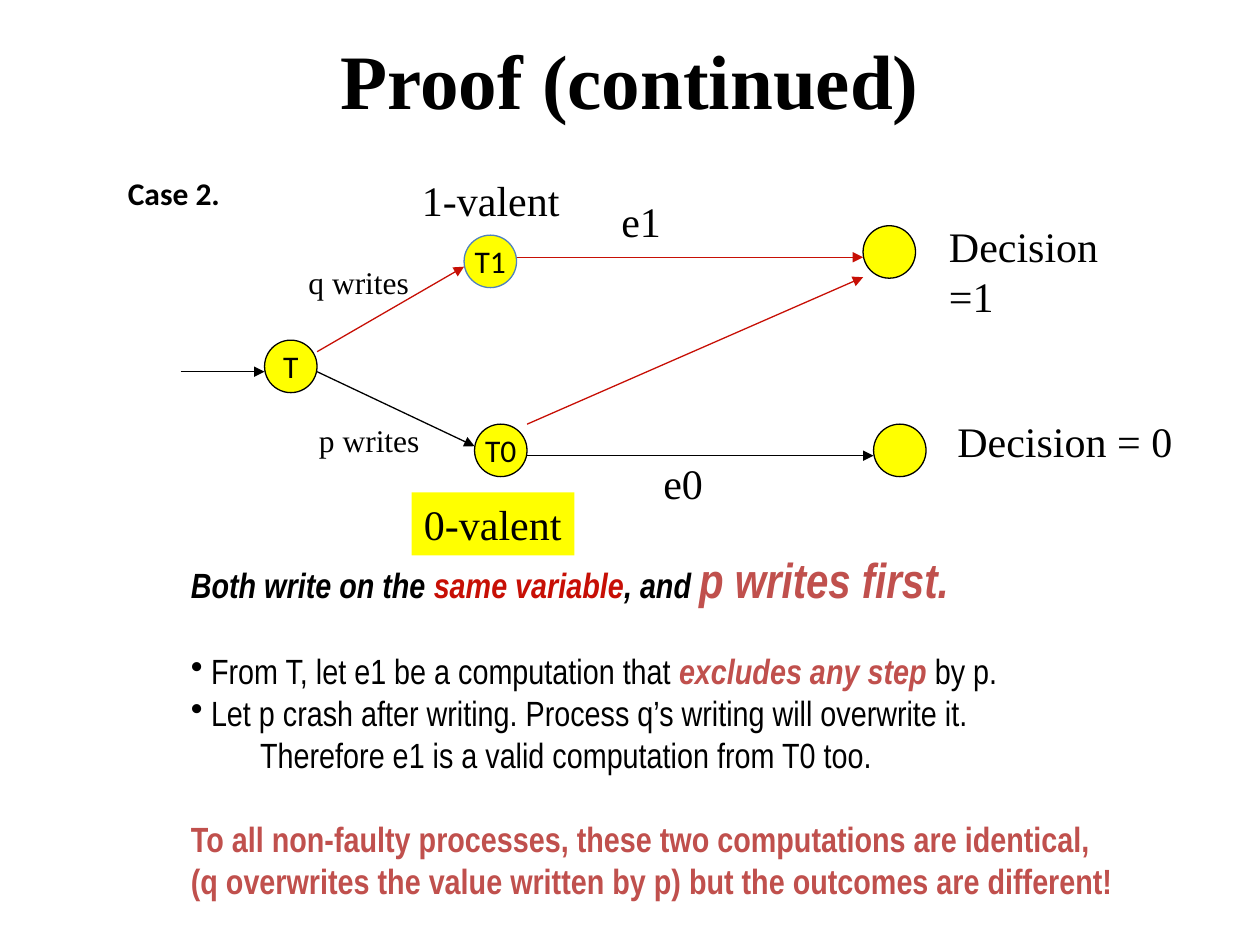
from dataclasses import dataclass

from lxml.etree import SubElement
from pptx import Presentation
from pptx.dml.color import RGBColor
from pptx.enum.shapes import MSO_CONNECTOR, MSO_SHAPE
from pptx.enum.text import MSO_ANCHOR, MSO_AUTO_SIZE, PP_ALIGN
from pptx.oxml.ns import qn
from pptx.util import Inches, Pt


@dataclass(frozen=True)
class Theme:
    black: str = "000000"
    red: str = "C70F05"
    rose: str = "C0504D"
    blue: str = "4F81BD"
    yellow: str = "FFFF00"
    serif: str = "Times New Roman"
    sans: str = "Calibri"
    narrow: str = "Arial Narrow"
    title: int = 44
    loud: int = 28
    big: int = 24
    body: int = 20
    small: int = 18
    rule: float = 0.75


class Deck:
    """Places elements on a grid of 120 columns by 90 rows."""

    def __init__(self, theme):
        self.theme = theme
        self.prs = Presentation()
        self.prs.slide_width, self.prs.slide_height = Inches(10), Inches(7.5)
        self.slide = self.prs.slides.add_slide(self.prs.slide_layouts[6])
        self.shapes = self.slide.shapes

    def grid(self, *cells):
        wide, high = self.prs.slide_width / 120, self.prs.slide_height / 90
        return [round(n * (high if i % 2 else wide)) for i, n in enumerate(cells)]

    def put(self, item, values):
        for name, value in values.items():
            setattr(item, name, value)

    def run(self, para, text, color, **font):
        run = para.add_run()
        run.text = text
        self.put(run.font, font)
        run.font.color.rgb = RGBColor.from_string(color)

    def box(self, spot, **frame):
        box = self.shapes.add_textbox(*self.grid(*spot))
        self.put(box.text_frame, {"word_wrap": False, **frame})
        return box

    def label(self, text, spot, size, face=None, bold=False, fill=None):
        box = self.box(spot, auto_size=MSO_AUTO_SIZE.SHAPE_TO_FIT_TEXT)
        self.run(box.text_frame.paragraphs[0], text, self.theme.black,
                 name=face or self.theme.serif, size=Pt(size), bold=bold)
        if fill:
            box.fill.solid()
            box.fill.fore_color.rgb = RGBColor.from_string(fill)

    def title(self, text, spot):
        box = self.box(spot, word_wrap=True, vertical_anchor=MSO_ANCHOR.MIDDLE)
        para = box.text_frame.paragraphs[0]
        para.alignment = PP_ALIGN.CENTER
        self.run(para, text, self.theme.black, name=self.theme.serif,
                 size=Pt(self.theme.title), bold=True)

    def node(self, text, left, top, edge):
        node = self.shapes.add_shape(MSO_SHAPE.OVAL, *self.grid(left, top, 5, 5))
        node.shadow.inherit = False
        node.fill.solid()
        node.fill.fore_color.rgb = RGBColor.from_string(self.theme.yellow)
        node.line.color.rgb = RGBColor.from_string(edge)
        node.line.width = Pt(self.theme.rule)
        if text:
            self.put(node.text_frame, {"word_wrap": False,
                                       "vertical_anchor": MSO_ANCHOR.MIDDLE})
            para = node.text_frame.paragraphs[0]
            para.alignment = PP_ALIGN.CENTER
            self.run(para, text, self.theme.black, name=self.theme.sans,
                     size=Pt(self.theme.small))

    def arrow(self, ends, color):
        line = self.shapes.add_connector(MSO_CONNECTOR.STRAIGHT, *self.grid(*ends))
        line.line.color.rgb = RGBColor.from_string(color)
        line.line.width = Pt(self.theme.rule)
        props = line.element.spPr
        SubElement(props.find(qn("a:ln")), qn("a:tailEnd"), type="triangle")
        SubElement(props, qn("a:effectLst"))

    def notes(self, spot, rows):
        frame = self.box(spot).text_frame
        for i, (gap, left, dot, parts) in enumerate(rows):
            para = frame.add_paragraph() if i else frame.paragraphs[0]
            para.space_before = Pt(gap)
            props = para._p.get_or_add_pPr()
            props.set("marL", str(Inches(left)))
            props.set("indent", str(-Inches(left) if dot else 0))
            if dot:
                SubElement(props, qn("a:buChar"), char="•")
            for text, color, strong, slant, size in parts:
                self.run(para, text, color, name=self.theme.narrow,
                         size=Pt(size), bold=strong, italic=slant)


def main():
    look = Theme()
    deck = Deck(look)
    black, red, rose = look.black, look.red, look.rose

    deck.title("Proof (continued)", (9, 0, 102, 15))

    # States
    for text, left, top, edge in (
        ("T", 25.2, 32.4, black),
        ("T0", 45.2, 40.4, black),
        ("T1", 44.2, 22.4, look.blue),
        ("", 83.2, 40.4, black),
        ("", 82.2, 21.5, black),
    ):
        deck.node(text, left, top, edge)

    # Steps between states
    for ends, color in (
        ((17.2, 35.4, 25.2, 35.4), black),
        ((30.2, 33.5, 44.2, 25.4), red),
        ((30.2, 35.4, 45.2, 42.5), black),
        ((49.2, 24.5, 82.2, 24.5), red),
        ((50.2, 43.4, 83.2, 43.4), black),
        ((50.2, 40.4, 82.2, 26.4), red),
    ):
        deck.arrow(ends, color)

    # Labels
    for text, left, top, wide in (
        ("Decision =1", 89.2, 20.4, 21.8),
        ("Decision = 0", 90, 39, 22.9),
        ("e1", 58, 18, 6.2),
        ("e0", 62, 43, 6.2),
        ("1-valent", 39, 16, 15.5),
    ):
        deck.label(text, (left, top, wide, 6), look.big)
    deck.label("0-valent", (39.2, 46.9, 15.5, 6), look.big, fill=look.yellow)
    deck.label("p writes", (29.2, 39.5, 12, 4.8), look.small)
    deck.label("q writes", (28.2, 24.5, 12, 4.8), look.small)
    deck.label("Case 2.", (11, 16, 15.6, 6), look.small, look.sans, bold=True)

    # Argument: gap before, left margin, bullet, runs
    def plain(text):
        return text, black, False, False, look.body

    def strong(text, color, slant=True, size=look.body):
        return text, color, True, slant, size

    deck.notes((17, 51.7, 91.1, 35.2), (
        (0, 0, False, [
            strong("Both write on the ", black),
            strong("same variable", red),
            strong(", and ", black),
            strong("p writes first.", rose, size=look.loud)]),
        (24, 0.16, True, [
            plain("From T, let e1 be a computation that "),
            strong("excludes any step", rose),
            plain(" by p.")]),
        (0, 0.16, True, [plain(
            "Let p crash after writing. Process q’s writing will overwrite it.")]),
        (0, 0.55, False, [plain(
            "Therefore e1 is a valid computation from T0 too.")]),
        (24, 0, False, [strong(
            "To all non-faulty processes, these two computations are identical,",
            rose, False)]),
        (0, 0, False, [strong(
            "(q overwrites the value written by p) but the outcomes are different!",
            rose, False)]),
    ))

    deck.prs.save("out.pptx")


if __name__ == "__main__":
    main()
